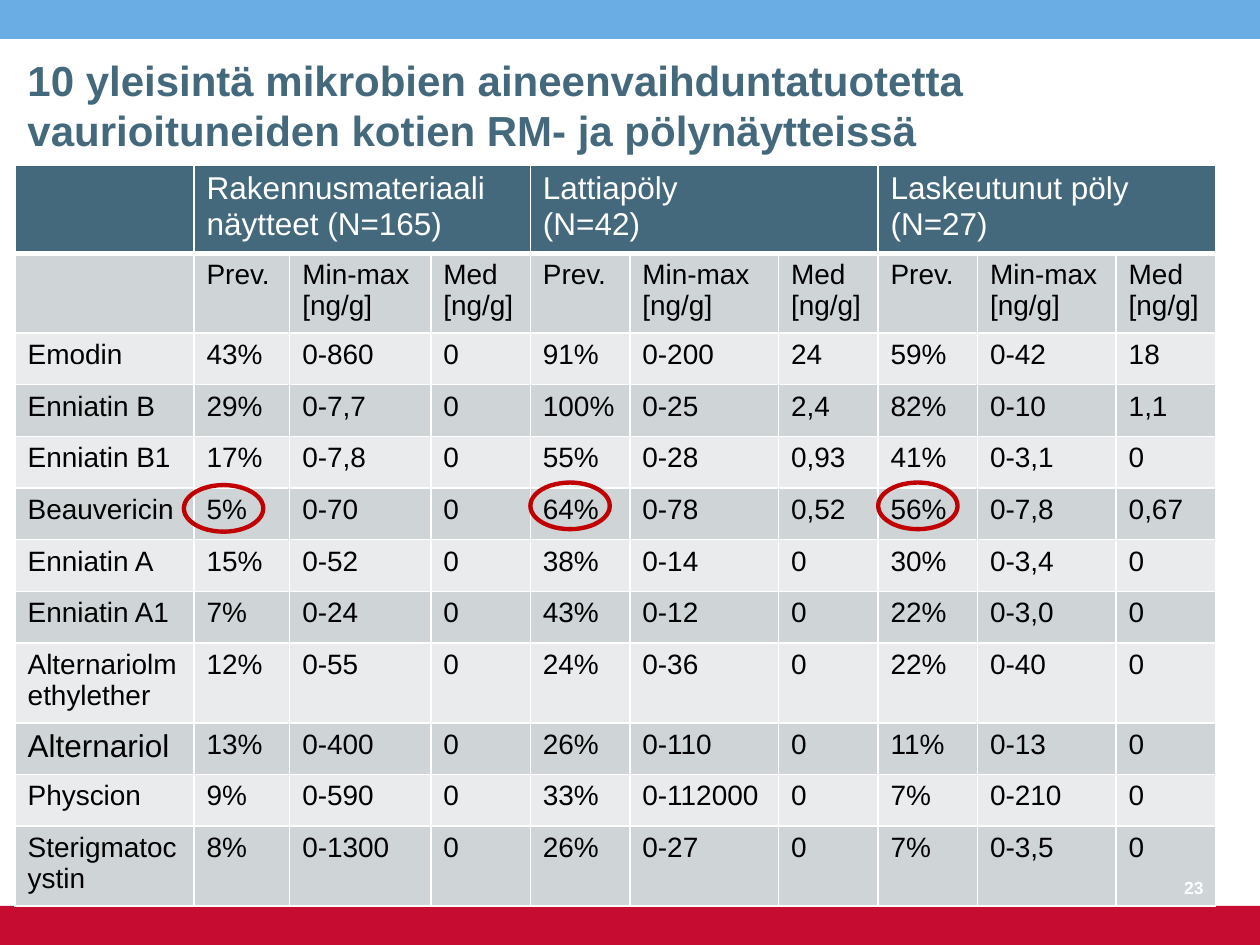
import pptx
import pptx.util
import pptx.dml.color
import pptx.enum.shapes
import pptx.enum.text
import pptx.oxml
import pptx.oxml.ns

COLORS = {"sky": "6AADE4", "red": "C60C30", "ring": "C00000", "teal": "44697D",
          "dark": "CFD4D7", "light": "E9EBEC", "white": "FFFFFF", "black": "000000"}
COLS = [142, 76, 112, 79, 79, 118, 79, 79, 110, 79]
ROWS = [70, 63, 41, 41, 41, 41, 41, 41, 63, 41, 41, 63]
GROUPS = ["Rakennusmateriaali näytteet (N=165)", "Lattiapöly\n(N=42)",
          "Laskeutunut pöly\n(N=27)"]
MEASURES = ["Prev.", "Min-max [ng/g]", "Med [ng/g]"]
DATA = """Emodin|43%|0-860|0|91%|0-200|24|59%|0-42|18
Enniatin B|29%|0-7,7|0|100%|0-25|2,4|82%|0-10|1,1
Enniatin B1|17%|0-7,8|0|55%|0-28|0,93|41%|0-3,1|0
Beauvericin|5%|0-70|0|64%|0-78|0,52|56%|0-7,8|0,67
Enniatin A|15%|0-52|0|38%|0-14|0|30%|0-3,4|0
Enniatin A1|7%|0-24|0|43%|0-12|0|22%|0-3,0|0
Alternariolmethylether|12%|0-55|0|24%|0-36|0|22%|0-40|0
Alternariol|13%|0-400|0|26%|0-110|0|11%|0-13|0
Physcion|9%|0-590|0|33%|0-112000|0|7%|0-210|0
Sterigmatocystin|8%|0-1300|0|26%|0-27|0|7%|0-3,5|0"""


class Deck:
    """Slide style and drawing methods on a grid of 1000 columns by 750 rows."""

    font = "Arial"

    def __init__(self):
        self.prs = pptx.Presentation()
        self.prs.slide_width = pptx.util.Inches(10)
        self.prs.slide_height = pptx.util.Inches(7.5)
        self.s = self.prs.slides.add_slide(self.prs.slide_layouts[6])

    def unit(self, n):
        return int(self.prs.slide_width * n / 1000)

    def box(self, at):
        return [self.unit(n) for n in at]

    def rgb(self, name):
        return pptx.dml.color.RGBColor.from_string(COLORS[name])

    def fill_text(self, tf, text, size, color, bold=False, align=None):
        tf.text = text
        fmt = {"name": self.font, "size": pptx.util.Pt(size), "bold": bold}
        for p in tf.paragraphs:
            p.alignment = align
            for r in p.runs:
                for key, value in fmt.items():
                    setattr(r.font, key, value)
                r.font.color.rgb = self.rgb(color)

    def text(self, at, text, size, color, align=None):
        tf = self.s.shapes.add_textbox(*self.box(at)).text_frame
        fmt = {"word_wrap": True, "vertical_anchor": pptx.enum.text.MSO_ANCHOR.BOTTOM}
        for key, value in fmt.items():
            setattr(tf, key, value)
        self.fill_text(tf, text, size, color, True, align)

    def shape(self, kind, at, fill=None, line=None):
        sp = self.s.shapes.add_shape(kind, *self.box(at))
        sp.shadow.inherit = False
        if fill:
            sp.fill.solid()
            sp.fill.fore_color.rgb = self.rgb(fill)
        else:
            sp.fill.background()
        if line:
            sp.line.color.rgb = self.rgb(line)
            sp.line.width = pptx.util.Pt(2.5)
        else:
            sp.line.fill.background()

    def bar(self, top, fill):
        self.shape(pptx.enum.shapes.MSO_SHAPE.RECTANGLE, (0, top, 1000, 31), fill)

    def ring(self, left, top):
        self.shape(pptx.enum.shapes.MSO_SHAPE.OVAL, (left, top, 63, 37), line="ring")

    def border(self, cell, widths):
        tcPr = cell._tc.get_or_add_tcPr()
        for side, width in zip("LRTB", widths):
            tcPr.append(pptx.oxml.parse_xml(
                f'<a:ln{side} {pptx.oxml.ns.nsdecls("a")} w="{pptx.util.Pt(width)}">'
                f'<a:solidFill><a:srgbClr val="{COLORS["white"]}"/></a:solidFill>'
                f'</a:ln{side}>'))

    def table(self, left, top, cols, rows, values):
        at = (left, top, sum(cols), sum(rows))
        tb = self.s.shapes.add_table(len(rows), len(cols), *self.box(at)).table
        tb.first_row = tb.horz_banding = False
        for col, width in zip(tb.columns, cols):
            col.width = self.unit(width)
        for i, (row, height) in enumerate(zip(tb.rows, rows)):
            row.height = self.unit(height)
            fill = "teal" if i == 0 else "dark" if i % 2 else "light"
            for cell, value in zip(row.cells, values[i]):
                self.border(cell, (1, 1, 3 if i == 1 else 1, 3 if i == 0 else 1))
                cell.fill.solid()
                cell.fill.fore_color.rgb = self.rgb(fill)
                if value:
                    size = 18 if i == 0 or value == "Alternariol" else 16
                    self.fill_text(cell.text_frame, value, size,
                                   "black" if i else "white")
        for c in range(1, len(cols), 3):
            tb.cell(0, c).merge(tb.cell(0, c + 2))


def main():
    deck = Deck()
    deck.bar(0, "sky")
    deck.bar(719, "red")
    deck.text((12, 37, 930, 91), "10 yleisintä mikrobien aineenvaihduntatuotetta "
              "vaurioituneiden kotien RM- ja pölynäytteissä", 24, "teal")
    header = [""] + [v for group in GROUPS for v in (group, "", "")]
    body = [line.split("|") for line in DATA.splitlines()]
    deck.table(12, 131, COLS, ROWS, [header, [""] + MEASURES * 3] + body)
    for left, top in ((146, 385), (697, 383), (421, 383)):
        deck.ring(left, top)
    deck.text((910, 678, 55, 40), "23", 10, "white", pptx.enum.text.PP_ALIGN.RIGHT)
    deck.prs.save("out.pptx")


if __name__ == "__main__":
    main()
